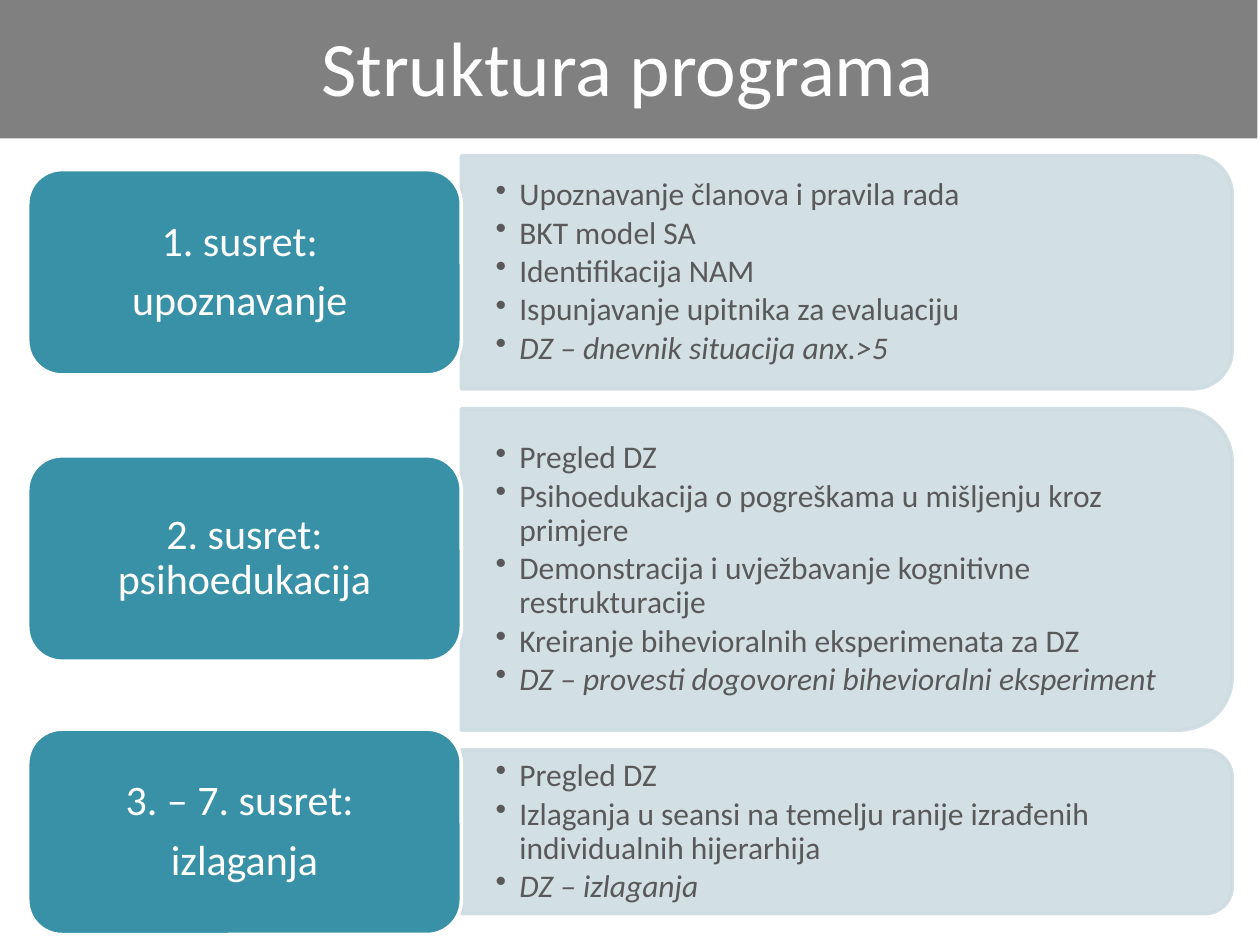
from dataclasses import dataclass

from lxml import etree
from pptx import Presentation
from pptx.dml.color import RGBColor
from pptx.enum import shapes, text
from pptx.oxml.ns import qn
from pptx.util import Cm, Pt


@dataclass(frozen=True)
class Theme:
    font: str = "Calibri"
    bar: str = "808080"
    label: str = "3891A7"
    panel: str = "CEDCE1"
    ink: str = "595959"
    white: str = "FFFFFF"
    head: int = 44
    name: int = 24
    body: int = 18


THEME = Theme()
KIND = shapes.MSO_SHAPE
ALIGN = text.PP_ALIGN
GAP = 0.4
TOP = 3.14
LEFT = 0.56
LABEL_W, LABEL_H = 8.74, 4.14
PANEL_W, TEXT_W = 15.54, 15.3

# label lines, panel height, label shift, points (the last one is homework)
ROWS = [
    (["1. susret: ", "upoznavanje "], 4.7, 0,
     ["Upoznavanje članova i pravila rada", "BKT model SA",
      "Identifikacija NAM", "Ispunjavanje upitnika za evaluaciju",
      "DZ – dnevnik situacija anx.>5"]),
    (["2. susret: psihoedukacija"], 6.48, -0.22,
     ["Pregled DZ", "Psihoedukacija o pogreškama u mišljenju kroz primjere",
      "Demonstracija i uvježbavanje kognitivne restrukturacije",
      "Kreiranje bihevioralnih eksperimenata za DZ",
      "DZ – provesti dogovoreni bihevioralni eksperiment"]),
    (["3. – 7. susret: ", "izlaganja"], 3.3, 0,
     ["Pregled DZ",
      "Izlaganja u seansi na temelju ranije izrađenih individualnih hijerarhija",
      "DZ – izlaganja"]),
]


def apply(obj, form):
    for key, val in form.items():
        setattr(obj, key, val)


def add_block(slide, kind, box, fill, line=None):
    block = slide.shapes.add_shape(kind, *map(Cm, box))
    block.shadow.inherit = False
    block.fill.solid()
    block.fill.fore_color.rgb = RGBColor.from_string(fill)
    if line:
        block.line.color.rgb = RGBColor.from_string(line)
        block.line.width = Pt(2)
    else:
        block.line.fill.background()
    return block


def write(shape, lines, size, color, pads, form):
    """Fill a shape with one paragraph per line and return the paragraphs."""
    frame = shape.text_frame
    side, edge = map(Cm, pads)
    apply(frame, dict(word_wrap=True, vertical_anchor=text.MSO_ANCHOR.MIDDLE,
                      margin_left=side, margin_right=side,
                      margin_top=edge, margin_bottom=edge))
    for num, line in enumerate(lines):
        para = frame.paragraphs[0] if num == 0 else frame.add_paragraph()
        apply(para, form)
        run = para.add_run()
        run.text = line
        apply(run.font, dict(name=THEME.font, size=Pt(size)))
        run.font.color.rgb = RGBColor.from_string(color)
    return frame.paragraphs


def fade(shape, part):
    """Make the fill and line of a shape opaque only to the given part."""
    for color in shape._element.spPr.iter(qn("a:srgbClr")):
        etree.SubElement(color, qn("a:alpha"), val=str(int(part * 100000)))


def add_bullet(para):
    props = para._p.get_or_add_pPr()
    apply_indent = dict(marL=Cm(0.48), indent=-Cm(0.48))
    for key, val in apply_indent.items():
        props.set(key, str(val))
    etree.SubElement(props, qn("a:buChar"), char="•")


def add_title(slide, box):
    bar = add_block(slide, KIND.RECTANGLE, box, THEME.bar)
    write(bar, ["Struktura programa"], THEME.head, THEME.white, (0.25, 0.13),
          dict(alignment=ALIGN.CENTER))


def add_panel(slide, box, points):
    left, top, wide, high = box
    # The shape is turned upright, so its width and height change places.
    turned = (left + (wide - high) / 2, top + (high - wide) / 2, high, wide)
    panel = add_block(slide, KIND.ROUND_2_SAME_RECTANGLE, turned,
                      THEME.panel, THEME.panel)
    panel.rotation = 90
    fade(panel, 0.9)
    area = slide.shapes.add_textbox(*map(Cm, (left, top, TEXT_W, high)))
    paras = write(area, points, THEME.body, THEME.ink, (0.69, 0.36),
                  dict(alignment=ALIGN.LEFT, line_spacing=0.9,
                       space_after=Pt(2.5)))
    for para in paras:
        add_bullet(para)
    paras[-1].runs[0].font.italic = True


def add_label(slide, box, lines):
    label = add_block(slide, KIND.ROUNDED_RECTANGLE, box,
                      THEME.label, THEME.white)
    write(label, lines, THEME.name, THEME.white, (0.45, 0.33),
          dict(alignment=ALIGN.CENTER, line_spacing=0.9, space_after=Pt(8)))


def add_row(slide, box, lines, shift, points):
    left, top, wide, high = box
    add_panel(slide, (left + LABEL_W, top, wide - LABEL_W, high), points)
    mid = top + (high - LABEL_H) / 2 + shift
    add_label(slide, (left, mid, LABEL_W, LABEL_H), lines)


def main():
    deck = Presentation()
    apply(deck, dict(slide_width=Cm(25.4), slide_height=Cm(19.05)))
    slide = deck.slides.add_slide(deck.slide_layouts[6])
    top = TOP
    for lines, high, shift, points in ROWS:
        add_row(slide, (LEFT, top, LABEL_W + PANEL_W, high),
                lines, shift, points)
        top += high + GAP
    add_title(slide, (-0.05, -0.13, 25.4, 2.92))
    deck.save("out.pptx")


if __name__ == "__main__":
    main()
